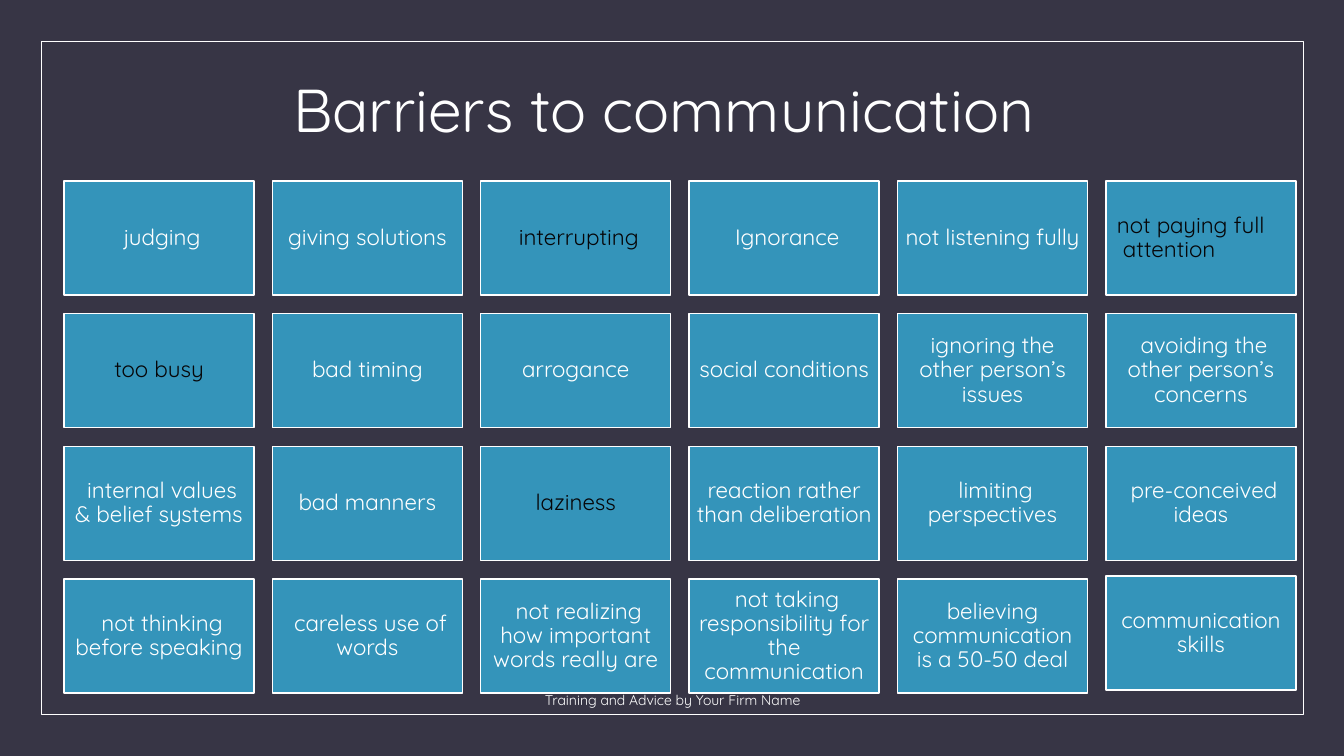
from pptx import Presentation
from pptx.dml.color import RGBColor
from pptx.enum.shapes import MSO_SHAPE
from pptx.enum.text import MSO_ANCHOR, MSO_AUTO_SIZE, PP_ALIGN
from pptx.util import Emu, Pt

RECTANGLE = MSO_SHAPE.RECTANGLE
MIDDLE, BOTTOM = MSO_ANCHOR.MIDDLE, MSO_ANCHOR.BOTTOM
CENTER, LEFT = PP_ALIGN.CENTER, PP_ALIGN.LEFT
NO_AUTOFIT = MSO_AUTO_SIZE.NONE

EMU_PER_PX = 914400 / 100.8
WHITE, BLACK, BLUE, NAVY = "FFFFFF", "060507", "3494BA", "373545"

GRID_LEFT, GRID_TOP, GRID_WIDTH, GRID_HEIGHT = 64, 181, 1232, 512
TILE_WIDTH, TILE_HEIGHT, TILE_INSET = 190, 114, 7
LAST_TILE_RISE = 3
BARRIERS = [
    [" judging", "giving solutions", " interrupting", " Ignorance",
     "not listening fully", "not paying full\v attention"],
    ["too busy", "bad timing", "arrogance", "social conditions",
     "ignoring the other person’s issues", " avoiding the other person’s concerns"],
    [" internal values & belief systems", "bad manners", "laziness",
     "reaction rather than deliberation", " limiting perspectives", " pre-conceived ideas"],
    [" not thinking before speaking", " careless use of words",
     " not realizing how important words really are",
     " not taking responsibility for the communication",
     "believing communication is a 50-50 deal", "communication skills"],
]
DARK_TILES = {(0, 2), (0, 5), (1, 0), (2, 2)}
LEFT_ALIGNED_TILE = (0, 5)


def px(*lengths):
    return [Emu(round(length * EMU_PER_PX)) for length in lengths]


def write(shape, text, size, color=WHITE, anchor=MIDDLE, align=CENTER, spacing=0.9):
    frame = shape.text_frame
    frame.text = text
    frame_format = {"word_wrap": True, "auto_size": NO_AUTOFIT, "vertical_anchor": anchor}
    for name, value in frame_format.items():
        setattr(frame, name, value)
    paragraph = frame.paragraphs[0]
    paragraph.alignment = align
    paragraph.line_spacing = spacing
    for run in paragraph.runs:
        for name, value in {"name": "Quicksand", "size": Pt(size)}.items():
            setattr(run.font, name, value)
        run.font.color.rgb = RGBColor.from_string(color)


presentation = Presentation()
presentation.slide_width, presentation.slide_height = px(1344, 756)
slide = presentation.slides.add_slide(presentation.slide_layouts[5])
slide.background.fill.solid()
slide.background.fill.fore_color.rgb = RGBColor.from_string(NAVY)

border = slide.shapes.add_shape(RECTANGLE, *px(41, 41, 1262, 673))
border.shadow.inherit = False
border.fill.background()
border.line.color.rgb = RGBColor.from_string(WHITE)
border.line.width = Pt(0.5)

title = slide.shapes.title
title.left, title.top, title.width, title.height = px(64, 77, 1216, 71)
write(title, "Barriers to communication ", 43.2)

column_count, row_count = len(BARRIERS[0]), len(BARRIERS)
column_step = (GRID_WIDTH - TILE_WIDTH) / (column_count - 1)
row_step = (GRID_HEIGHT - TILE_HEIGHT) / (row_count - 1)
for row, barriers in enumerate(BARRIERS):
    for column, barrier in enumerate(barriers):
        left = GRID_LEFT + column * column_step
        top = GRID_TOP + row * row_step
        if (row, column) == (row_count - 1, column_count - 1):
            top -= LAST_TILE_RISE
        tile = slide.shapes.add_shape(RECTANGLE, *px(left, top, TILE_WIDTH, TILE_HEIGHT))
        tile.shadow.inherit = False
        tile.fill.solid()
        tile.fill.fore_color.rgb = RGBColor.from_string(BLUE)
        tile.line.color.rgb = RGBColor.from_string(WHITE)
        tile.line.width = Pt(1)
        for side in ("left", "top", "right", "bottom"):
            setattr(tile.text_frame, f"margin_{side}", px(TILE_INSET)[0])
        color = BLACK if (row, column) in DARK_TILES else WHITE
        write(tile, barrier, 16, color)
        if (row, column) == LEFT_ALIGNED_TILE:
            tile.text_frame.paragraphs[0].alignment = LEFT
            tile.text_frame.margin_left = px(11)[0]

footer = slide.shapes.add_textbox(*px(385, 685, 575, 28))
write(footer, "Training and Advice by Your Firm Name", 10, anchor=BOTTOM, spacing=1.0)

presentation.save("out.pptx")
